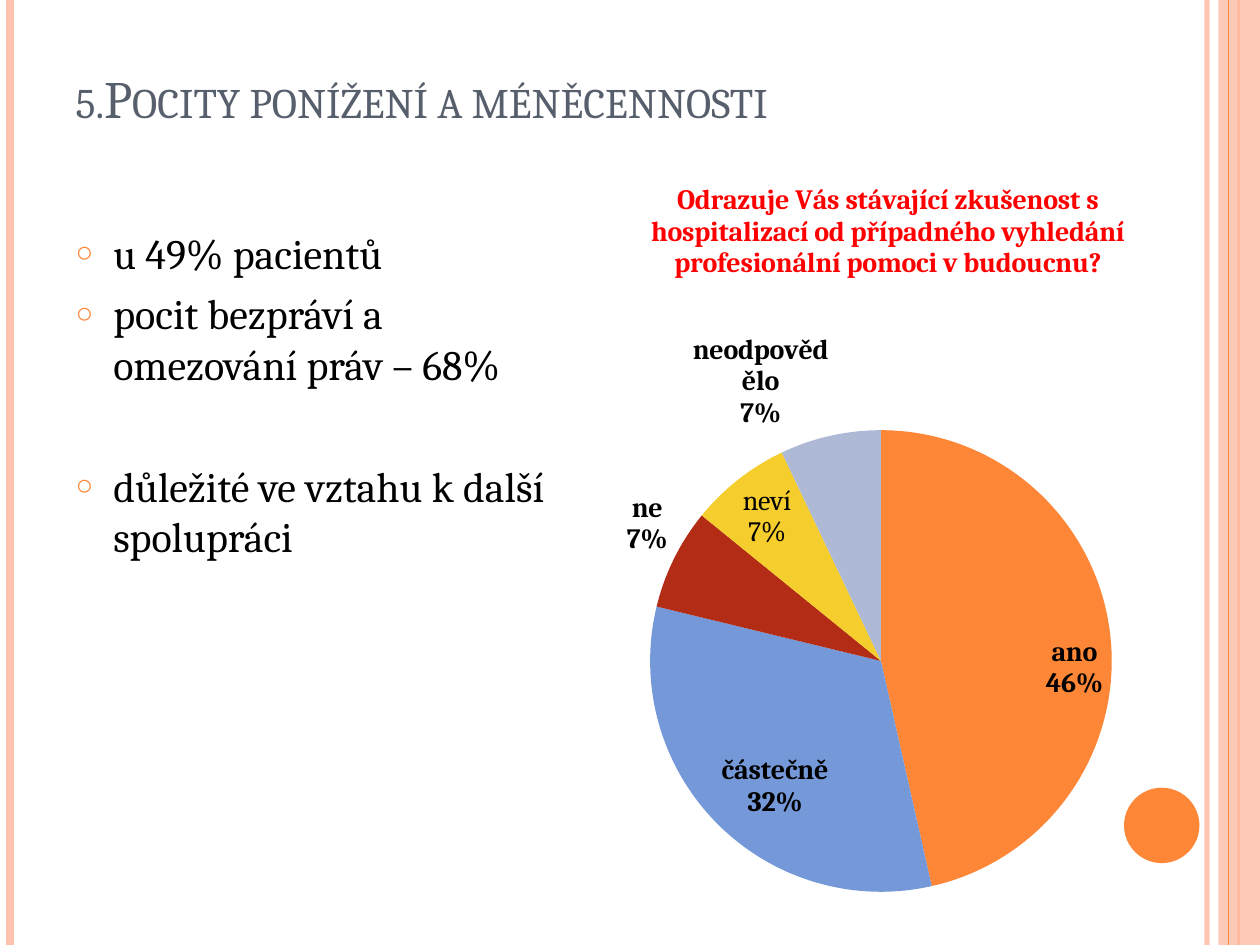
from lxml.etree import SubElement as Sub
from pptx import Presentation
from pptx.chart.data import CategoryChartData as Data
from pptx.dml.color import RGBColor
from pptx.enum.chart import XL_CHART_TYPE as Kind, XL_LABEL_POSITION as Pos
from pptx.enum.shapes import MSO_CONNECTOR as Link, MSO_SHAPE as Form
from pptx.enum.text import MSO_ANCHOR as Anchor, MSO_AUTO_SIZE as Fit, PP_ALIGN as Align
from pptx.oxml import parse_xml
from pptx.oxml.ns import nsdecls, qn
from pptx.util import Cm, Pt

ORANGE, PEACH, BLACK = "FE8637", "FEC3AE", "000000"


def paint(color, code):
    color.rgb = RGBColor.from_string(code)


def fade(fill, part):
    for tone in fill._xPr.iter(qn("a:srgbClr")):
        Sub(tone, qn("a:alpha"), val=str(part * 1000))


class Deck:
    face = "Cambria"

    def __init__(self, wide, high):
        self.file = Presentation()
        self.file.slide_width, self.file.slide_height = Cm(wide), Cm(high)
        self.high = high
        self.slide = self.file.slides.add_slide(self.file.slide_layouts[1])
        self.shapes = self.slide.shapes

    def style(self, font, size, code=BLACK, bold=False):
        font.name, font.size, font.bold = self.face, Pt(size), bold
        paint(font.color, code)

    def place(self, shape, box):
        shape.left, shape.top, shape.width, shape.height = map(Cm, box)
        frame = shape.text_frame
        frame.auto_size, frame.word_wrap = Fit.NONE, True
        return frame

    def title(self, text, box):
        frame = self.place(self.shapes.title, box)
        frame.text, frame.vertical_anchor = text, Anchor.BOTTOM
        par = frame.paragraphs[0]
        par.alignment = Align.LEFT
        self.style(par.font, 30, "575F6D")
        par.font._rPr.set("cap", "small")

    def bullets(self, items, box):
        frame = self.place(self.slide.placeholders[1], box)
        frame.text = "\n".join(text for text, gap in items)
        for par, (text, gap) in zip(frame.paragraphs, items):
            par.space_before = Pt(gap)
            prop = par._p.get_or_add_pPr()
            prop.set("marL", str(Cm(0.76)))
            prop.set("indent", str(-Cm(0.76)))
            Sub(Sub(prop, qn("a:buClr")), qn("a:srgbClr"), val=ORANGE)
            Sub(prop, qn("a:buSzPct"), val="70000")
            Sub(prop, qn("a:buChar"), char="○")
            self.style(par.font, 24)

    def stripe(self, x, width, code, part=100):
        line = self.shapes.add_connector(Link.STRAIGHT, Cm(x), 0, Cm(x), Cm(self.high))
        line.line.width = Pt(width)
        paint(line.line.color, code)
        if part < 100:
            fade(line.line.fill, part)
        Sub(line._element.spPr, qn("a:effectLst"))

    def block(self, form, box, code, part=100):
        shape = self.shapes.add_shape(form, *map(Cm, box))
        shape.shadow.inherit = False
        shape.fill.solid()
        paint(shape.fill.fore_color, code)
        if part < 100:
            fade(shape.fill, part)
        shape.line.fill.background()

    def pie(self, head, rows, box, area):
        data = Data()
        data.categories = [row[0] for row in rows]
        data.add_series("Series 1", [row[1] for row in rows])
        chart = self.shapes.add_chart(Kind.PIE, *map(Cm, box), data).chart
        self.style(chart.font, 10)
        chart.has_legend, chart.has_title = False, True
        chart.chart_title.text_frame.text = head
        self.style(chart.chart_title.text_frame.paragraphs[0].font, 16, "FF0000", True)
        plot = chart.plots[0]
        plot.vary_by_categories = True
        self.layout(chart, area)
        series = plot.series[0]
        tags = series.data_labels
        self.style(tags.font, 16, bold=True)
        tags.position = Pos.INSIDE_END
        for point, (name, value, code, spot, text) in zip(series.points, rows):
            point.format.fill.solid()
            paint(point.format.fill.fore_color, code)
            point.format.line.fill.background()
            tag = point.data_label
            if text:
                tag.text_frame.text = text
                for par in tag.text_frame.paragraphs:
                    self.style(par.font, 16)
            else:
                self.style(tag.font, 16, bold=True)
            tag.position = spot
        self.show(series)

    def layout(self, chart, area):
        root = chart._chartSpace.chart.plotArea
        for old in root.findall(qn("c:layout")):
            root.remove(old)
        keys = ("layoutTarget", "xMode", "yMode", "x", "y", "w", "h")
        vals = ("inner", "edge", "edge", *area)
        parts = "".join(f'<c:{key} val="{val}"/>' for key, val in zip(keys, vals))
        root.insert(0, parse_xml(
            f'<c:layout {nsdecls("c")}><c:manualLayout>{parts}</c:manualLayout></c:layout>'))

    def show(self, series):
        flags = {"showVal": "0", "showCatName": "1", "showPercent": "1"}
        for key, val in flags.items():
            for flag in series._element.iter(qn(f"c:{key}")):
                flag.set("val", val)
        for last in list(series._element.iter(qn("c:showPercent"))):
            mark = last.getnext()
            if mark is None or mark.tag != qn("c:showBubbleSize"):
                mark = last
            mark.addnext(parse_xml(f'<c:separator {nsdecls("c")}>\n</c:separator>'))


def main():
    deck = Deck(25.4, 19.05)
    deck.stripe(24.33, 3, PEACH, 93)
    deck.stripe(0.2, 4.5, PEACH)
    deck.stripe(24.97, 1.5, ORANGE)
    deck.block(Form.RECTANGLE, (24.56, 0, 0.84, 19.05), PEACH, 87)
    deck.stripe(24.77, 0.75, ORANGE)
    deck.block(Form.OVAL, (22.66, 15.88, 1.52, 1.52), ORANGE)
    deck.title("5.Pocity ponížení a méněcennosti", (1.27, 0.76, 20.75, 1.96))
    deck.bullets([
        ("u 49% pacientů", 6),
        ("pocit bezpráví a omezování práv – 68%", 6),
        ("důležité ve vztahu k další spolupráci", 41),
    ], (1.27, 4.45, 10.16, 12.7))
    deck.pie(
        "Odrazuje Vás stávající zkušenost s hospitalizací od případného "
        "vyhledání profesionální pomoci v budoucnu?",
        [
            ("ano", 46, ORANGE, Pos.INSIDE_END, None),
            ("částečně", 32, "7598D9", Pos.INSIDE_END, None),
            ("ne", 7, "B32C16", Pos.OUTSIDE_END, None),
            ("nevím", 7, "F5CD2D", Pos.INSIDE_END, "neví\n7%"),
            ("neodpovědělo", 7, "AEBAD5", Pos.OUTSIDE_END, None),
        ],
        (10.9, 3.12, 14, 15.01), (0.02, 0.37, 0.94, 0.62))
    deck.file.save("out.pptx")


if __name__ == "__main__":
    main()
